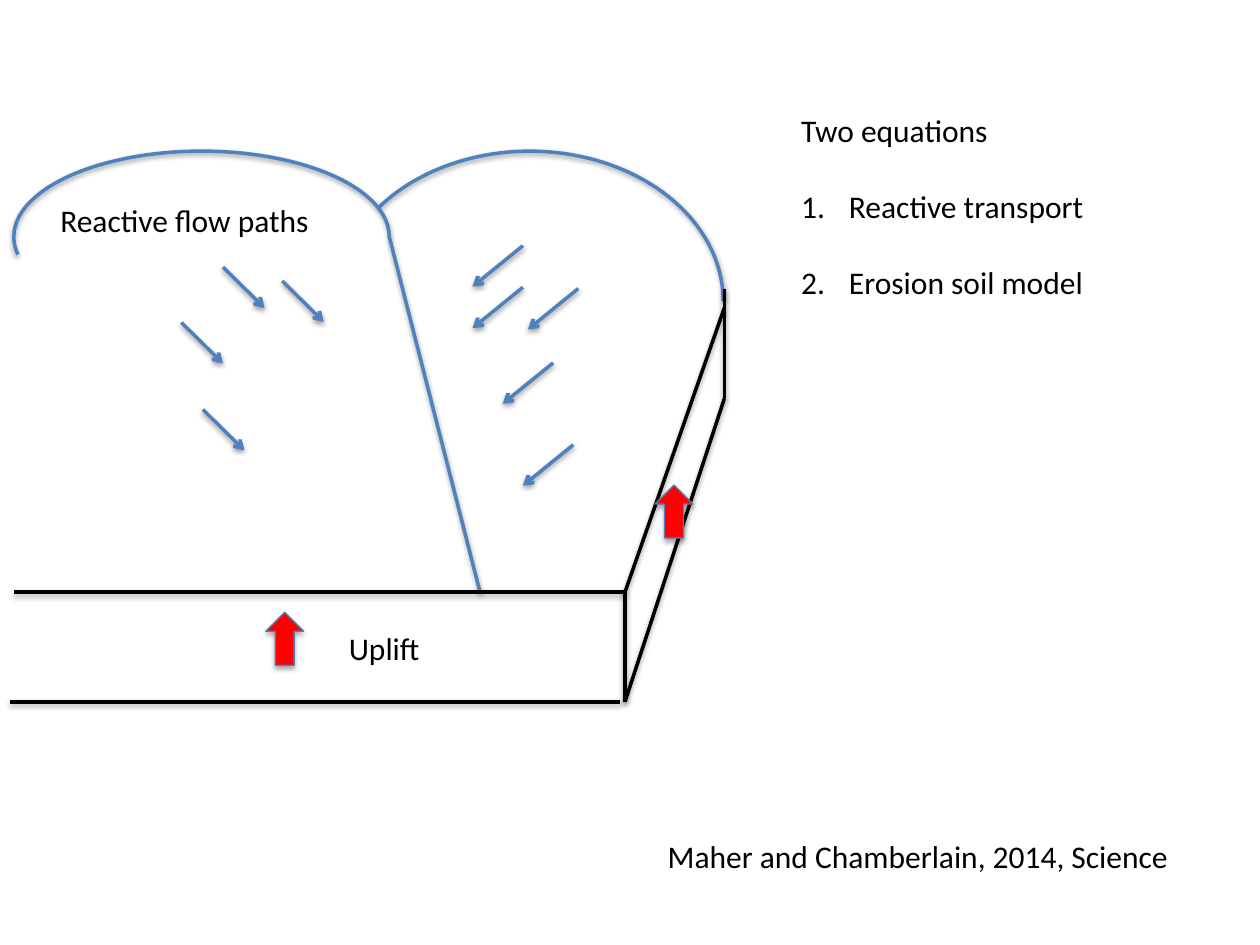
import pptx
import pptx.util
import pptx.dml.color
import pptx.enum.shapes
import pptx.enum.text
import pptx.oxml
import pptx.oxml.ns

BLUE = pptx.dml.color.RGBColor(0x4F, 0x81, 0xBD)
EDGE = pptx.dml.color.RGBColor(0x4B, 0x7E, 0xBC)
RED = pptx.dml.color.RGBColor(0xFF, 0, 0)
BLACK = pptx.dml.color.RGBColor(0, 0, 0)
SHAPE = pptx.enum.shapes.MSO_SHAPE
NS = pptx.oxml.ns.nsdecls("a")

prs = pptx.Presentation()
prs.slide_width = pptx.util.Inches(10)
prs.slide_height = pptx.util.Inches(7.5)
s = prs.slides.add_slide(prs.slide_layouts[6])
COL = prs.slide_width / 100
ROW = prs.slide_height / 75


def grid(*cells):
    return [round(c * (ROW if i % 2 else COL)) for i, c in enumerate(cells)]


def outline(sp, color, width=2, alpha=38, dist=1.6, arrow=False):
    sp.line.color.rgb = color
    sp.line.width = pptx.util.Pt(width)
    if arrow:
        sp.line._get_or_add_ln().append(
            pptx.oxml.parse_xml(f'<a:tailEnd {NS} type="arrow"/>'))
    blur, gap = pptx.util.Pt(3.1), pptx.util.Pt(dist)
    sp._element.spPr.append(pptx.oxml.parse_xml(
        f'<a:effectLst {NS}><a:outerShdw blurRad="{blur}" dist="{gap}" '
        f'dir="5400000" rotWithShape="0"><a:srgbClr val="{BLACK}">'
        f'<a:alpha val="{alpha * 1000}"/></a:srgbClr></a:outerShdw></a:effectLst>'))


for box, start in [((26.7, 12, 30.7, 23.8), 127.2), ((1.1, 12, 29.8, 13.6), 104.68)]:
    sp = s.shapes.add_shape(SHAPE.ARC, *grid(*box))
    sp.adjustments[0] = start
    sp.adjustments[1] = 0
    sp.fill.background()
    outline(sp, BLUE)

lines = [
    (30.9, 18.8, 38.1, 47, BLUE),
    (1.1, 47, 49.6, 47, BLACK),
    (49.6, 47, 57.5, 24.4, BLACK),
    (49.6, 47, 49.6, 55.7, BLACK),
    (57.5, 22.9, 57.5, 31.6, BLACK),
    (49.6, 55.7, 57.5, 31.6, BLACK),
    (0.8, 55.7, 49.2, 55.7, BLACK),
]
for *ends, color in lines:
    sp = s.shapes.add_connector(
        pptx.enum.shapes.MSO_CONNECTOR.STRAIGHT, *grid(*ends))
    outline(sp, color)

for x, y in [(21.1, 48.6), (52, 38.5)]:
    sp = s.shapes.add_shape(SHAPE.UP_ARROW, *grid(x, y, 3, 4.2))
    sp.fill.solid()
    sp.fill.fore_color.rgb = RED
    outline(sp, EDGE, 0.75, 35, 1.8)

flows = [
    (3.3, [(17.7, 21.2), (22.4, 22.3), (14.4, 25.6), (16.1, 32.5)]),
    (-4, [(41.5, 19.5), (41.5, 22.8), (45.9, 22.9), (43.9, 28.8), (45.5, 35.3)]),
]
for dx, starts in flows:
    for x, y in starts:
        sp = s.shapes.add_connector(
            pptx.enum.shapes.MSO_CONNECTOR.STRAIGHT, *grid(x, y, x + dx, y + 3.25))
        outline(sp, BLUE, arrow=True)

texts = [
    ((26.7, 49.4, 7.7, 4), ["Uplift"]),
    ((3.8, 15.5, 21.9, 4), ["Reactive flow paths"]),
    ((62.6, 8.3, 24.6, 16.2),
     ["Two equations", "Reactive transport", "Erosion soil model"]),
    ((52, 65.9, 42.1, 4), ["Maher and Chamberlain, 2014, Science"]),
]
for box, paragraphs in texts:
    tf = s.shapes.add_textbox(*grid(*box)).text_frame
    tf.word_wrap = False
    tf.auto_size = pptx.enum.text.MSO_AUTO_SIZE.SHAPE_TO_FIT_TEXT
    for i, text in enumerate(paragraphs):
        p = tf.add_paragraph() if i else tf.paragraphs[0]
        if i:
            indent = pptx.util.Inches(0.38)
            pPr = p._p.get_or_add_pPr()
            pPr.set("marL", str(indent))
            pPr.set("indent", str(-indent))
            pPr.append(pptx.oxml.parse_xml(
                f'<a:buFont {NS} typeface="+mj-lt"/>'))
            pPr.append(pptx.oxml.parse_xml(
                f'<a:buAutoNum {NS} type="arabicPeriod"/>'))
            p.space_before = pptx.util.Pt(22)
        r = p.add_run()
        r.text = text
        r.font.name = "Calibri"
        r.font.size = pptx.util.Pt(18)
        r.font.color.rgb = BLACK

prs.save("out.pptx")
